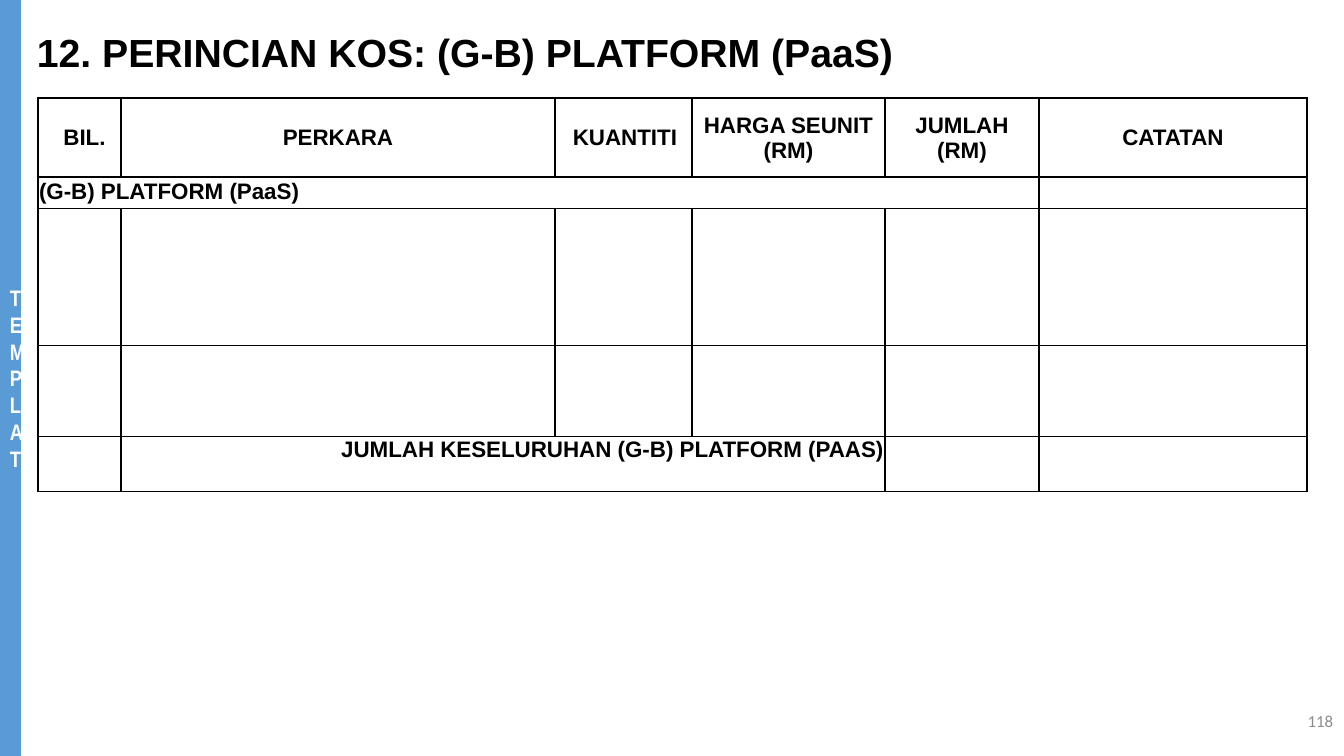
import lxml.etree
import pptx
import pptx.dml.color
import pptx.enum.shapes
import pptx.enum.text
import pptx.oxml.ns
import pptx.util

ALIGN = pptx.enum.text.PP_ALIGN
MIDDLE = pptx.enum.text.MSO_ANCHOR.MIDDLE
TOP = pptx.enum.text.MSO_ANCHOR.TOP
BLACK = pptx.dml.color.RGBColor(0x00, 0x00, 0x00)
WHITE = pptx.dml.color.RGBColor(0xFF, 0xFF, 0xFF)
BLUE = pptx.dml.color.RGBColor(0x5B, 0x9B, 0xD5)
GREY = pptx.dml.color.RGBColor(0x8C, 0x8C, 0x8C)

TITLE = "12. PERINCIAN KOS: (G-B) PLATFORM (PaaS)"
SIDEBAR = "TEMPLAT"
PAGE = "118"
HEADERS = [
    ("BIL.", 10),
    ("PERKARA", 0),
    ("KUANTITI", 3),
    ("HARGA SEUNIT\n(RM)", 0),
    ("JUMLAH\n(RM)", 0),
    ("CATATAN", 0),
]
SECTION = "(G-B) PLATFORM (PaaS)"
TOTAL = "JUMLAH KESELURUHAN (G-B) PLATFORM (PAAS)"
COLS = [83, 434, 137, 193, 154, 268]
ROWS = [79, 31, 137, 91, 55]


def px(n):
    return round(n * 914400 / 100.8)


def write(tf, text, size, font, color, align, bold=True):
    tf.text = text
    for p in tf.paragraphs:
        p.alignment = align
        p.font.size = pptx.util.Pt(size)
        p.font.name = font
        p.font.bold = bold
        p.font.color.rgb = color


def add_text(slide, box, text, size, font, color, align, bold):
    tf = slide.shapes.add_textbox(*map(px, box)).text_frame
    tf.word_wrap = True
    tf.vertical_anchor = MIDDLE
    write(tf, text, size, font, color, align, bold)
    return tf.paragraphs[0]


def style_cell(cell):
    cell.margin_left = cell.margin_right = cell.margin_top = px(1)
    cell.margin_bottom = 0
    tc_pr = cell._tc.get_or_add_tcPr()
    for side in ("lnL", "lnR", "lnT", "lnB"):
        ln = lxml.etree.SubElement(tc_pr, pptx.oxml.ns.qn(f"a:{side}"), w="12700")
        fill = lxml.etree.SubElement(ln, pptx.oxml.ns.qn("a:solidFill"))
        lxml.etree.SubElement(fill, pptx.oxml.ns.qn("a:srgbClr"), val=str(BLACK))
    cell.fill.solid()
    cell.fill.fore_color.rgb = WHITE


def fill_cell(cell, text, align, anchor):
    write(cell.text_frame, text, 16, "Arial", BLACK, align)
    cell.vertical_anchor = anchor


def add_cost_table(slide):
    box = (38, 98, sum(COLS), sum(ROWS))
    table = slide.shapes.add_table(len(ROWS), len(COLS), *map(px, box)).table
    table.first_row = table.horz_banding = False
    for column, width in zip(table.columns, COLS):
        column.width = px(width)
    for row, height in zip(table.rows, ROWS):
        row.height = px(height)
    for cell in table.iter_cells():
        style_cell(cell)
    for c, (text, indent) in enumerate(HEADERS):
        cell = table.cell(0, c)
        fill_cell(cell, text, ALIGN.CENTER, MIDDLE)
        if indent:
            p_pr = cell.text_frame.paragraphs[0]._p.get_or_add_pPr()
            p_pr.set("marL", str(px(indent)))
            p_pr.set("indent", "0")
    section = table.cell(1, 0)
    section.merge(table.cell(1, 4))
    fill_cell(section, SECTION, ALIGN.LEFT, MIDDLE)
    section.text_frame.paragraphs[0].line_spacing = pptx.util.Pt(15.7)
    total = table.cell(4, 1)
    total.merge(table.cell(4, 3))
    fill_cell(total, TOTAL, ALIGN.RIGHT, TOP)


def main():
    prs = pptx.Presentation()
    prs.slide_width, prs.slide_height = px(1344), px(756)
    slide = prs.slides.add_slide(prs.slide_layouts[6])

    bar = slide.shapes.add_shape(
        pptx.enum.shapes.MSO_SHAPE.RECTANGLE, 0, 0, px(21), px(756))
    bar.shadow.inherit = False
    bar.fill.solid()
    bar.fill.fore_color.rgb = BLUE
    bar.line.fill.background()
    bar.text_frame.word_wrap = True
    bar.text_frame.vertical_anchor = MIDDLE
    write(bar.text_frame, SIDEBAR, 16, "Arial Narrow", WHITE, ALIGN.CENTER)

    add_cost_table(slide)
    title = add_text(slide, (27, 22, 1159, 66), TITLE, 28, "Arial", BLACK,
                     ALIGN.LEFT, True)
    title.line_spacing = 0.9
    add_text(slide, (1041, 701, 302, 40), PAGE, 12, "Calibri", GREY,
             ALIGN.RIGHT, False)
    prs.save("out.pptx")


if __name__ == "__main__":
    main()
